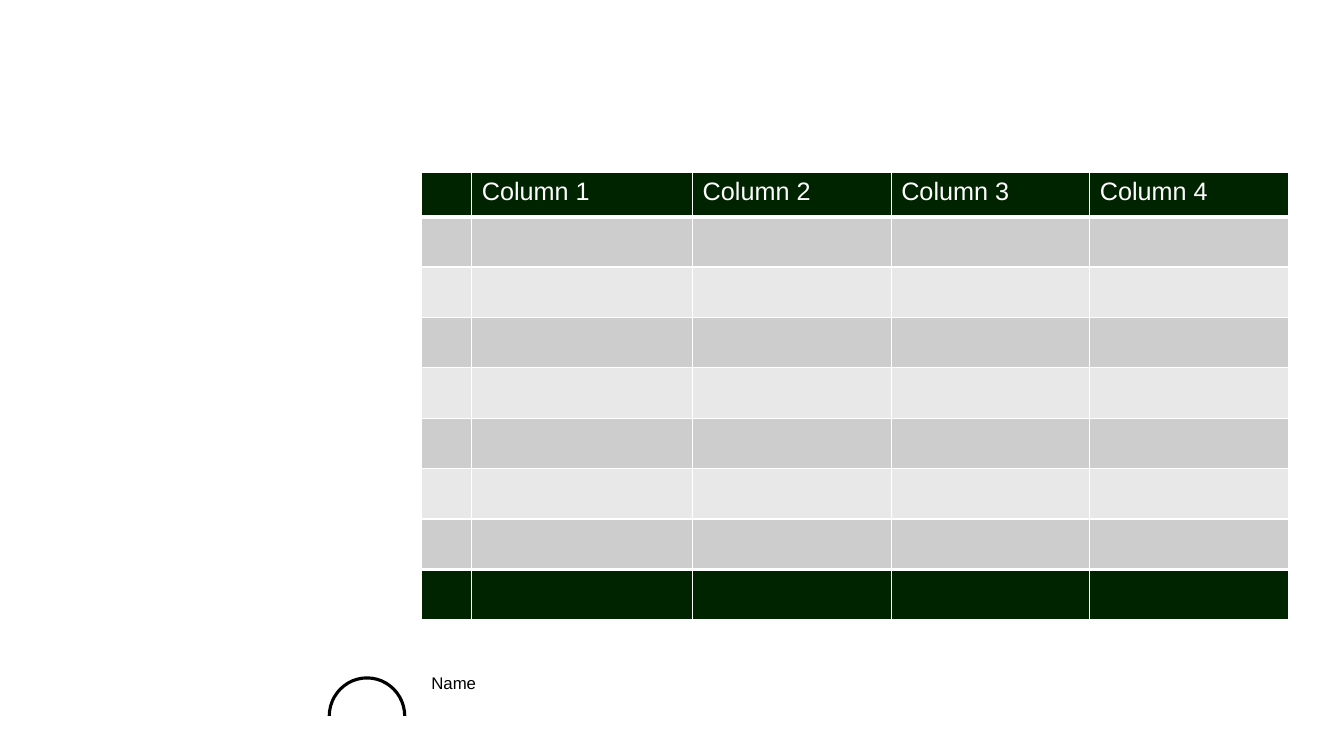
from pptx import Presentation
from pptx.dml.color import RGBColor
from pptx.enum.shapes import MSO_SHAPE
from pptx.enum.text import MSO_ANCHOR
from pptx.oxml import parse_xml
from pptx.oxml.ns import nsdecls
from pptx.util import Inches, Pt

HEADERS = ["", "Column 1", "Column 2", "Column 3", "Column 4"]
COL_WIDTHS = [0.5, 2.19, 1.97, 1.97, 1.97]
ROW_HEIGHTS = [0.44] + [0.5] * 8
TABLE_AT = (4.18, 1.71)
NAME, NAME_BOX = "Name", (4.18, 6.74, 2.37, 0.17)
ARC_BOX, ARC_ADJ = (3.25, 6.71, 0.78, 0.79), (108.16, 215.85, 0.04)
COLORS = {"green": "002300", "dark": "CCCDCC", "light": "E7E8E7",
          "white": "FFFFFF", "black": "000000"}


def rgb(name):
    return RGBColor.from_string(COLORS[name])


def set_font(font, size, color):
    values = {"name": "Arial", "size": Pt(size), "bold": False}
    for key, value in values.items():
        setattr(font, key, value)
    font.color.rgb = rgb(color)


def set_borders(cell, top, bottom):
    tc_pr = cell._tc.get_or_add_tcPr()
    for side, width in {"L": 1, "R": 1, "T": top, "B": bottom}.items():
        tc_pr.append(parse_xml(
            f'<a:ln{side} {nsdecls("a")} w="{Pt(width)}"><a:solidFill>'
            f'<a:srgbClr val="{COLORS["white"]}"/></a:solidFill></a:ln{side}>'))


def add_arc(s):
    sp = s.shapes.add_shape(MSO_SHAPE.BLOCK_ARC, *map(Inches, ARC_BOX))
    for i, value in enumerate(ARC_ADJ):
        sp.adjustments[i] = value
    sp.shadow.inherit = False
    sp.fill.solid()
    sp.fill.fore_color.rgb = rgb("black")
    sp.line.fill.background()


def add_name(s):
    tf = s.shapes.add_textbox(*map(Inches, NAME_BOX)).text_frame
    tf.word_wrap = True
    tf.vertical_anchor = MSO_ANCHOR.TOP
    p = tf.paragraphs[0]
    p.line_spacing = Pt(6)
    r = p.add_run()
    r.text = NAME
    set_font(r.font, 12, "black")


def add_grid(s):
    size = (sum(COL_WIDTHS), sum(ROW_HEIGHTS))
    last = len(ROW_HEIGHTS) - 1
    table = s.shapes.add_table(len(ROW_HEIGHTS), len(COL_WIDTHS),
                               *map(Inches, TABLE_AT + size)).table
    for col, width in zip(table.columns, COL_WIDTHS):
        col.width = Inches(width)
    for i, (row, height) in enumerate(zip(table.rows, ROW_HEIGHTS)):
        row.height = Inches(height)
        band = "green" if i in (0, last) else "dark" if i % 2 else "light"
        top = 3 if i in (1, last) else 1
        bottom = 3 if i in (0, last - 1) else 1
        for j, cell in enumerate(row.cells):
            set_borders(cell, top, bottom)
            cell.fill.solid()
            cell.fill.fore_color.rgb = rgb(band)
            if i == 0 and HEADERS[j]:
                r = cell.text_frame.paragraphs[0].add_run()
                r.text = HEADERS[j]
                set_font(r.font, 18, "white")


def main():
    """Build the slide with a column table, a name line and an arc."""
    prs = Presentation()
    prs.slide_width, prs.slide_height = Inches(13.33), Inches(7.5)
    s = prs.slides.add_slide(prs.slide_layouts[6])
    s.background.fill.solid()
    s.background.fill.fore_color.rgb = rgb("white")
    add_arc(s)
    add_name(s)
    add_grid(s)
    prs.save("out.pptx")


if __name__ == "__main__":
    main()
